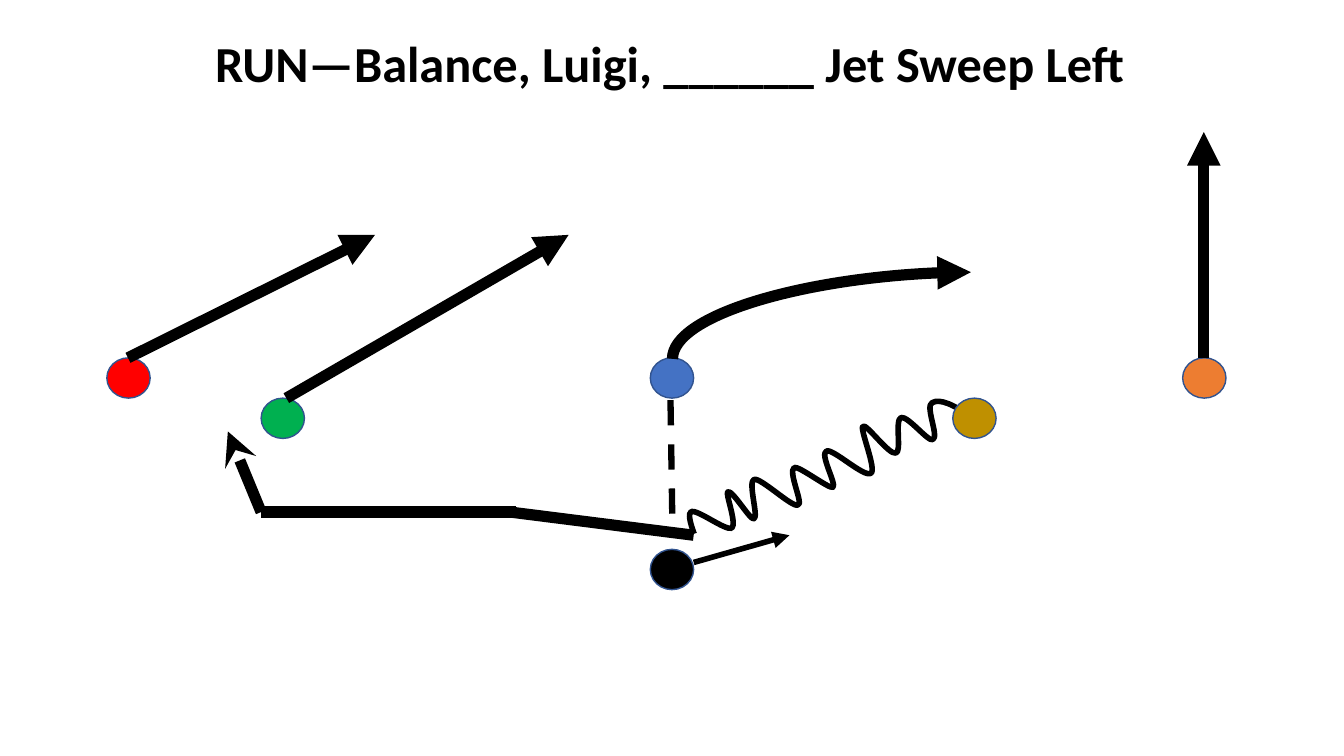
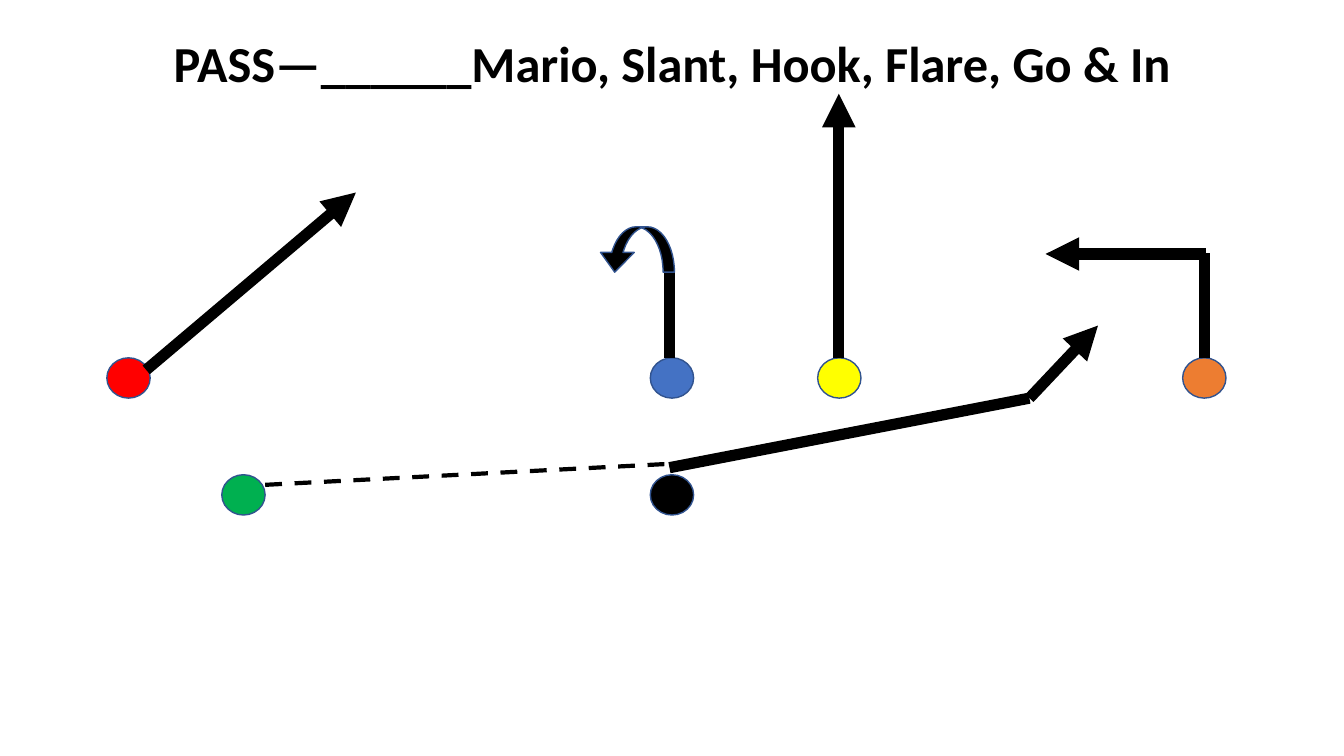
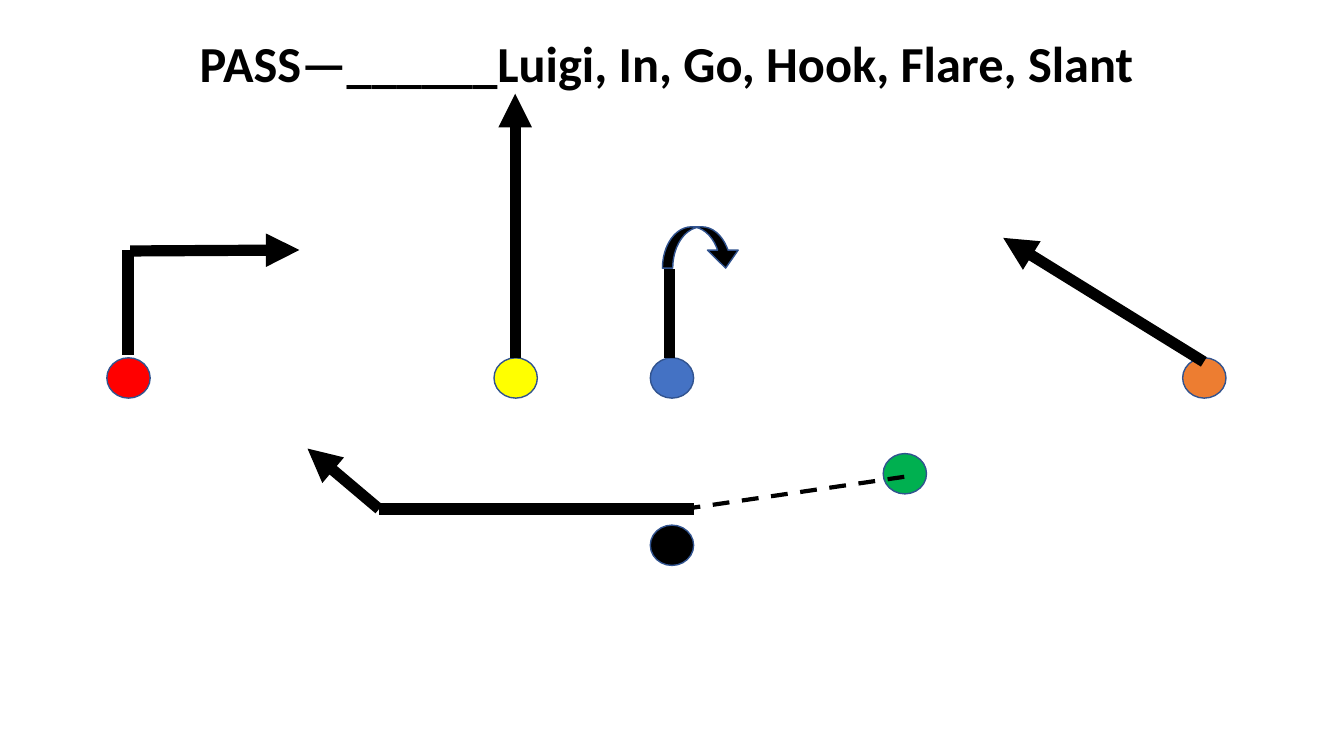
from dataclasses import dataclass
from itertools import pairwise
from math import cos, radians, sin

from lxml.etree import SubElement
from pptx import Presentation
from pptx.dml.color import RGBColor
from pptx.enum.dml import MSO_LINE
from pptx.enum.shapes import MSO_CONNECTOR as Link, MSO_SHAPE as Preset
from pptx.enum.text import MSO_ANCHOR, MSO_AUTO_SIZE, PP_ALIGN
from pptx.oxml.ns import qn
from pptx.util import Emu, Pt

EMU_PER_PX = 9144
FONT = "Calibri"
COLOURS = {
    "black": "000000",
    "white": "FFFFFF",
    "outline": "31538F",
    "blue": "4472C4",
    "red": "FF0000",
    "orange": "ED7D31",
    "gold": "BF9000",
    "green": "00B050",
    "yellow": "FFFF00",
}
PLAYER_SIZE = (43, 40)
HOOK_ADJUSTMENTS = (0.25, 0.744, 0.435)
MOTION_BOX = (673, 439, 297, 49)
MOTION_TILT = 334.5

Point = tuple[int, int]
Box = tuple[int, int, int, int]


@dataclass(frozen=True)
class Player:
    """A player's colour and top-left corner."""
    colour: str
    left: int
    top: int


@dataclass(frozen=True)
class Route:
    """A run of straight legs, with the arrowhead on the last."""
    points: tuple[Point, ...]
    head: str = ""
    weight: float = 8
    dashed: bool = False


@dataclass(frozen=True)
class Hook:
    """A curved arrow that ends a hook route."""
    box: Box
    flipped: bool = False


@dataclass(frozen=True)
class Play:
    """One slide of the playbook."""
    title: str
    title_box: Box
    players: tuple[Player, ...]
    routes: tuple[Route, ...]
    hooks: tuple[Hook, ...] = ()
    sweeps: tuple[Box, ...] = ()
    motion: tuple[Point, ...] = ()


LINEMEN = (Player("blue", 645, 355), Player("red", 106, 355), Player("orange", 1173, 355))
PASS_TITLE_BOX = (92, 25, 1150, 82)
HOOK_STEM = Route(((664, 355), (664, 267)))
JET_MOTION = (
    (962, 414), (947, 402), (932, 394), (924, 398),
    (917, 402), (932, 435), (926, 437), (922, 440), (900, 412), (893, 413),
    (887, 415), (895, 450), (889, 451), (882, 453), (858, 417), (855, 421),
    (852, 423), (871, 468), (864, 471), (858, 475), (826, 444), (819, 446),
    (812, 449), (831, 483), (827, 485), (823, 487), (792, 461), (787, 463),
    (781, 467), (799, 503), (792, 503), (786, 505), (755, 473), (747, 474),
    (740, 476), (753, 514), (748, 516), (745, 518), (725, 484), (721, 487),
    (718, 488), (732, 520), (726, 525), (719, 527), (692, 505), (685, 506),
    (681, 508), (684, 519), (689, 530),
)
PLAYS = (
    Play(
        "RUN—Balance, Luigi, ______ Jet Sweep Left",
        (18, 25, 1293, 82),
        (*LINEMEN, Player("gold", 945, 395), Player("black", 645, 545),
         Player("green", 259, 395)),
        (
            Route(((127, 355), (372, 233)), "triangle"),
            Route(((284, 395), (564, 233)), "triangle"),
            Route(((688, 531), (506, 508))),
            Route(((512, 508), (259, 508), (226, 428)), "stealth"),
            Route(((688, 558), (783, 531)), "triangle", 4),
            Route(((1194, 355), (1194, 131)), "triangle"),
            Route(((665, 397), (667, 526)), weight=4.5, dashed=True),
        ),
        sweeps=((772, 165, 86, 296),),
        motion=JET_MOTION,
    ),
    Play(
        "PASS—______Mario, Slant, Hook, Flare, Go & In",
        PASS_TITLE_BOX,
        (*LINEMEN, Player("green", 220, 471), Player("black", 645, 471),
         Player("yellow", 811, 355)),
        (
            Route(((145, 367), (353, 191)), "triangle"),
            Route(((263, 481), (667, 460)), weight=3, dashed=True),
            Route(((664, 464), (1021, 395), (1089, 323)), "triangle"),
            HOOK_STEM,
            Route(((832, 355), (832, 93)), "triangle"),
            Route(((1195, 355), (1195, 251))),
            Route(((1196, 252), (1037, 252)), "triangle"),
        ),
        hooks=(Hook((593, 225, 76, 45), flipped=True),),
    ),
    Play(
        "PASS—______Luigi, In, Go, Hook, Flare, Slant ",
        PASS_TITLE_BOX,
        (*LINEMEN, Player("green", 876, 450), Player("black", 645, 521),
         Player("yellow", 490, 355)),
        (
            Route(((1194, 359), (995, 236)), "triangle"),
            Route(((678, 505), (897, 473)), weight=3, dashed=True),
            Route(((688, 505), (376, 505), (305, 445)), "triangle"),
            HOOK_STEM,
            Route(((511, 355), (511, 93)), "triangle"),
            Route(((127, 352), (127, 248))),
            Route(((129, 249), (297, 248)), "triangle"),
        ),
        hooks=(Hook((657, 225, 78, 41)),),
    ),
)


def px(length: float) -> Emu:
    """Turn a pixel length into EMU."""
    return Emu(round(length * EMU_PER_PX))


def colour(name: str) -> RGBColor:
    """Look up a named colour."""
    return RGBColor.from_string(COLOURS[name])


def style_line(line, name: str, weight: float) -> None:
    """Give a line its colour and weight."""
    line.color.rgb = colour(name)
    line.width = Pt(weight)


def place(shape, box: Box) -> None:
    """Move and size a shape to a pixel box."""
    shape.left, shape.top, shape.width, shape.height = map(px, box)


def add_title(page, text: str, box: Box) -> None:
    """Place and format the slide title."""
    title = page.shapes.title
    place(title, box)
    frame = title.text_frame
    frame.word_wrap = True
    frame.auto_size = MSO_AUTO_SIZE.NONE
    frame.vertical_anchor = MSO_ANCHOR.MIDDLE
    para = frame.paragraphs[0]
    para.alignment = PP_ALIGN.CENTER
    para.line_spacing = 0.9
    span = para.add_run()
    span.text = text
    span.font.name = FONT
    span.font.size = Pt(36)
    span.font.bold = True
    span.font.color.rgb = colour("black")


def add_filled(page, preset: Preset, box: Box, fill: str):
    """Add a filled, outlined preset shape."""
    shape = page.shapes.add_shape(preset, *map(px, box))
    shape.shadow.inherit = False
    shape.fill.solid()
    shape.fill.fore_color.rgb = colour(fill)
    style_line(shape.line, "outline", 1)
    return shape


def add_hook(page, hook: Hook) -> None:
    """Add the curved end of a hook route."""
    arrow = add_filled(page, Preset.CURVED_DOWN_ARROW, hook.box, "black")
    for index, value in enumerate(HOOK_ADJUSTMENTS):
        arrow.adjustments[index] = value
    if hook.flipped:
        arrow._element.spPr.find(qn("a:xfrm")).set("flipH", "1")


def add_leg(page, kind: Link, start: Point, end: Point, weight: float,
            head: str = "", dashed: bool = False):
    """Add one connector and return its shape properties."""
    leg = page.shapes.add_connector(kind, *map(px, (*start, *end)))
    style_line(leg.line, "black", weight)
    if dashed:
        leg.line.dash_style = MSO_LINE.DASH
    properties = leg._element.spPr
    if head:
        SubElement(properties.find(qn("a:ln")), qn("a:tailEnd"), type=head)
    SubElement(properties, qn("a:effectLst"))
    return properties


def add_route(page, route: Route) -> None:
    """Draw each leg of a route."""
    for start, end in pairwise(route.points):
        head = route.head if end == route.points[-1] else ""
        add_leg(page, Link.STRAIGHT, start, end, route.weight, head, route.dashed)


def add_sweep(page, box: Box) -> None:
    """Add a quarter-curve arrow turned to rise and bend right."""
    left, top, width, height = box
    properties = add_leg(page, Link.CURVE, (left, top), (left + width, top + height),
                         8, "triangle")
    properties.find(qn("a:xfrm")).set("rot", "16200000")
    properties.find(qn("a:prstGeom")).set("prst", "curvedConnector2")


def level(point: Point) -> tuple[float, float]:
    """Turn a point of the motion back to its untilted place."""
    left, top, width, height = MOTION_BOX
    middle, centre = left + width / 2, top + height / 2
    across, down = point[0] - middle, point[1] - centre
    angle = radians(-MOTION_TILT)
    return (middle + across * cos(angle) - down * sin(angle),
            centre + across * sin(angle) + down * cos(angle))


def add_motion(page, points: tuple[Point, ...]) -> None:
    """Draw the wavy pre-snap motion as cubic curves."""
    start, *controls = map(level, points)
    builder = page.shapes.build_freeform(*start, scale=EMU_PER_PX)
    builder.add_line_segments(controls, close=False)
    wave = builder.convert_to_shape()
    outline = next(wave._element.spPr.iter(qn("a:path")))
    segments = outline.findall(qn("a:lnTo"))
    for first in range(0, len(segments), 3):
        curve = SubElement(outline, qn("a:cubicBezTo"))
        for segment in segments[first:first + 3]:
            curve.append(segment[0])
            outline.remove(segment)
    place(wave, MOTION_BOX)
    wave.rotation = MOTION_TILT
    wave.shadow.inherit = False
    wave.fill.background()
    style_line(wave.line, "black", 4)


def add_play(deck, play: Play) -> None:
    """Build one play slide."""
    page = deck.slides.add_slide(deck.slide_layouts.get_by_name("Title Only"))
    page.background.fill.solid()
    page.background.fill.fore_color.rgb = colour("white")
    add_title(page, play.title, play.title_box)
    if play.motion:
        add_motion(page, play.motion)
    for player in play.players:
        add_filled(page, Preset.OVAL, (player.left, player.top, *PLAYER_SIZE), player.colour)
    for route in play.routes:
        add_route(page, route)
    for hook in play.hooks:
        add_hook(page, hook)
    for sweep in play.sweeps:
        add_sweep(page, sweep)


def main() -> None:
    """Build and save the playbook."""
    deck = Presentation()
    deck.slide_width, deck.slide_height = px(1333), px(750)
    for play in PLAYS:
        add_play(deck, play)
    deck.save("out.pptx")


if __name__ == "__main__":
    main()
